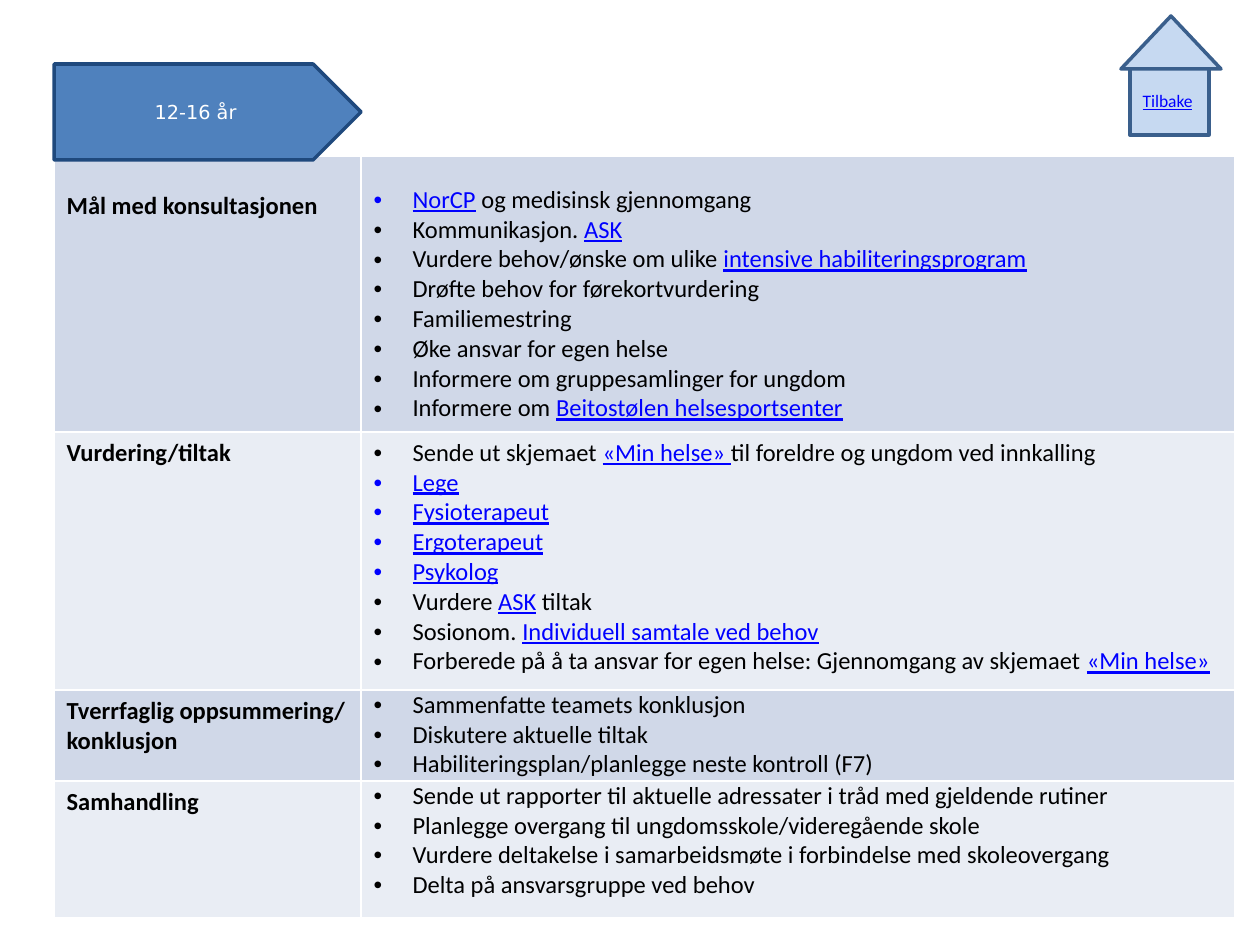
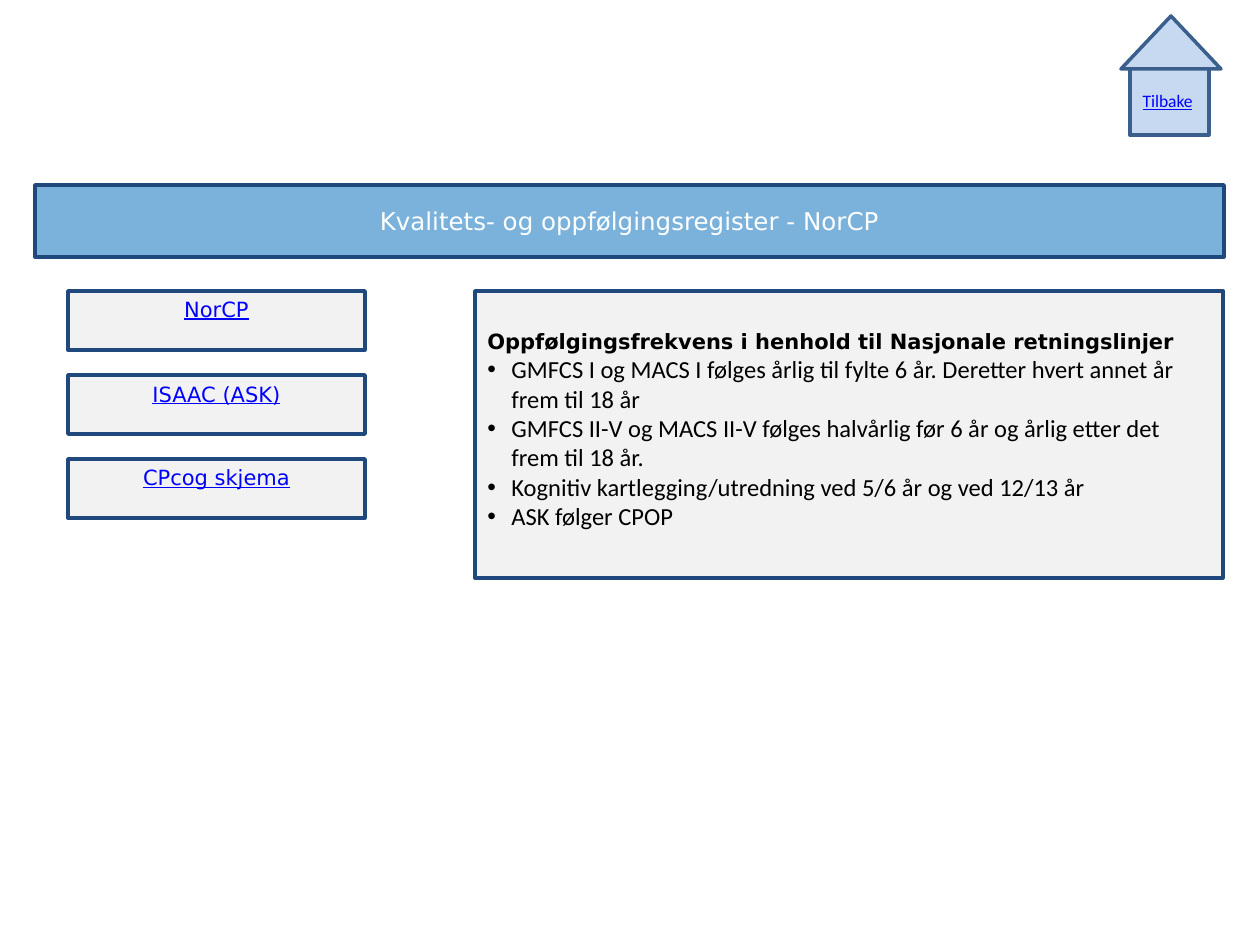
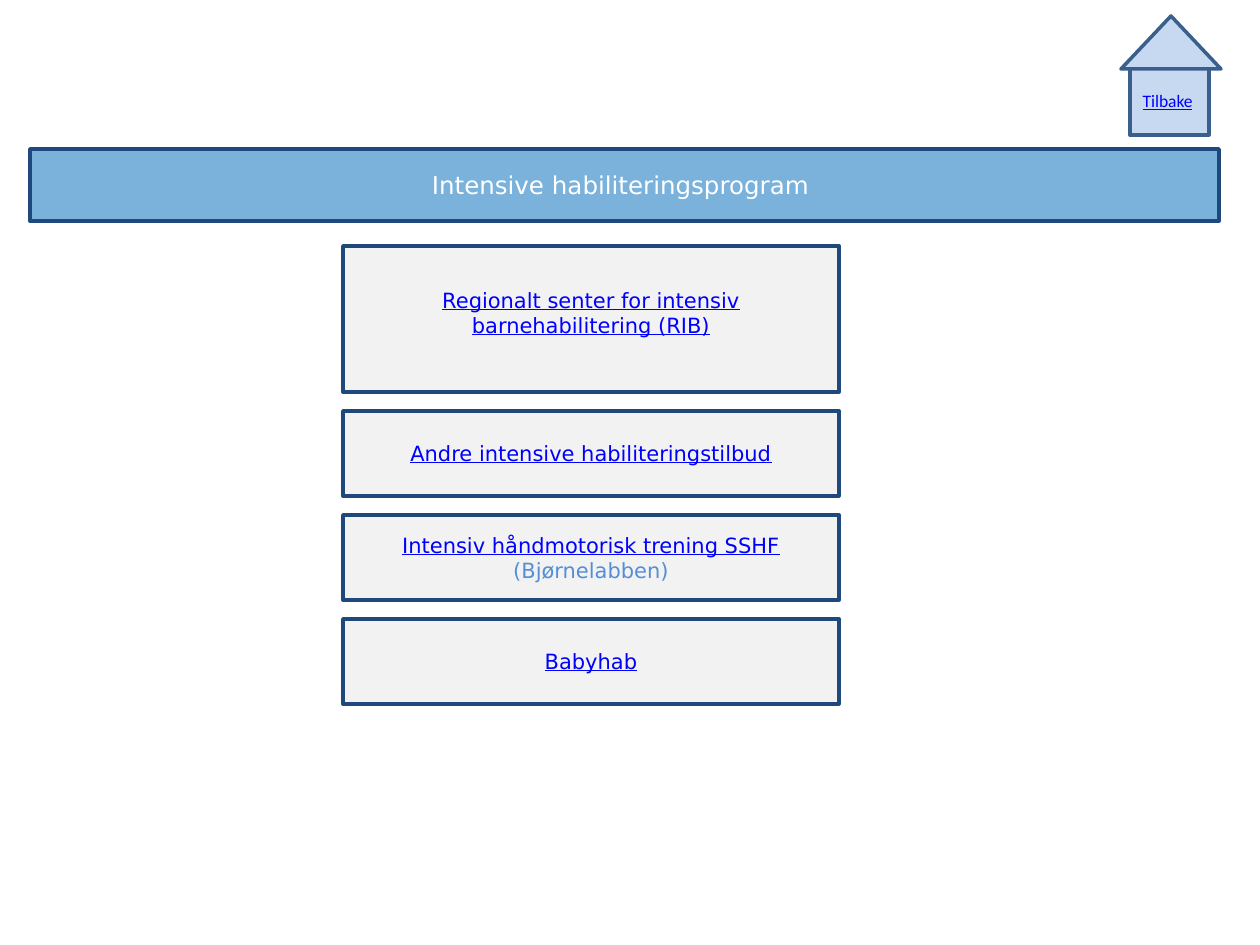
from dataclasses import dataclass

from lxml.etree import SubElement
from pptx import Presentation
from pptx.dml.color import RGBColor
from pptx.enum.shapes import MSO_SHAPE
from pptx.enum.text import MSO_ANCHOR, PP_ALIGN
from pptx.oxml.ns import qn
from pptx.util import Inches, Pt


@dataclass(frozen=True)
class Theme:
    white: str = "FFFFFF"
    black: str = "000000"
    link: str = "0000FF"
    accent: str = "558ED5"
    arrow: str = "4F81BD"
    outline: str = "1F497D"
    banner: str = "7AB2DC"
    panel: str = "F2F2F2"
    home: str = "C6D9F1"
    home_outline: str = "3A5F8C"
    bands: tuple = ("D0D8E8", "E9EDF4")
    body_font: str = "Calibri"
    label_font: str = "DejaVu Sans"
    title_size: int = 14
    body_size: int = 14
    button_size: int = 12
    arrow_size: int = 11
    home_size: int = 10
    outline_width: int = 2


THEME = Theme()
SLIDE_SIZE = (1260, 945)
BANNER_SIZE = (1189, 72)

AGE_GROUP = "12-16 år"
HOME_LABEL = "[Tilbake] "
CONSULTATION = [
    {
        "topic": ["Mål med konsultasjonen"],
        "points": [
            "[NorCP] og medisinsk gjennomgang",
            "Kommunikasjon. [ASK]",
            "Vurdere behov/ønske om ulike [intensive habiliteringsprogram]",
            "Drøfte behov for førekortvurdering",
            "Familiemestring",
            "Øke ansvar for egen helse",
            "Informere om gruppesamlinger for ungdom",
            "Informere om [Beitostølen helsesportsenter]",
        ],
        "height": 277, "topic_top": 36, "points_top": 30,
    },
    {
        "topic": ["Vurdering/tiltak"],
        "points": [
            "Sende ut skjemaet [«Min helse» ]til foreldre og ungdom ved innkalling",
            "[Lege]",
            "[Fysioterapeut]",
            "[Ergoterapeut]",
            "[Psykolog]",
            "Vurdere [ASK] tiltak",
            "Sosionom. [Individuell samtale ved behov]",
            "Forberede på å ta ansvar for egen helse: Gjennomgang av skjemaet [«Min helse»]",
        ],
        "height": 258, "topic_top": 6, "points_top": 6,
    },
    {
        "topic": ["Tverrfaglig oppsummering/", "konklusjon"],
        "points": [
            "Sammenfatte teamets konklusjon",
            "Diskutere aktuelle tiltak",
            "Habiliteringsplan/planlegge neste kontroll (F7)",
        ],
        "height": 91, "topic_top": 6, "points_top": 0,
    },
    {
        "topic": ["Samhandling"],
        "points": [
            "Sende ut rapporter til aktuelle adressater i tråd med gjeldende rutiner",
            "Planlegge overgang til ungdomsskole/videregående skole",
            "Vurdere deltakelse i samarbeidsmøte i forbindelse med skoleovergang",
            "Delta på ansvarsgruppe ved behov",
        ],
        "height": 137, "topic_top": 6, "points_top": 0,
    },
]

REGISTER_TITLE = "Kvalitets- og oppfølgingsregister - NorCP"
REGISTER_LINKS = ["[NorCP]", "[ISAAC (ASK)]", "[CPcog skjema]"]
FREQUENCY_HEADING = "Oppfølgingsfrekvens i henhold til Nasjonale retningslinjer"
FREQUENCY_POINTS = [
    "GMFCS I og MACS I følges årlig til fylte 6 år. Deretter hvert annet år frem til 18 år",
    "GMFCS II-V og MACS II-V følges halvårlig før 6 år og årlig etter det frem til 18 år.",
    "Kognitiv kartlegging/utredning ved 5/6 år og ved 12/13 år",
    "ASK følger CPOP",
]

PROGRAM_TITLE = "Intensive habiliteringsprogram "
MAIN_PROGRAM = "[Regionalt senter for intensiv barnehabilitering (RIB)]"
OTHER_PROGRAMS = [
    "[Andre intensive habiliteringstilbud]",
    "[Intensiv håndmotorisk trening SSHF ](Bjørnelabben)",
    "[Babyhab]",
]


def px(length):
    return round(length * Inches(1) / 126)


def rgb(color):
    return RGBColor.from_string(color)


def add_bullet(para, indent):
    properties = para._p.get_or_add_pPr()
    properties.set("marL", str(px(indent)))
    properties.set("indent", str(-px(indent)))
    SubElement(properties, qn("a:buFont")).set("typeface", "Arial")
    SubElement(properties, qn("a:buChar")).set("char", "•")


def write(para, text, size, color=THEME.black, font=THEME.label_font,
          bold=False, align=PP_ALIGN.LEFT, bullet=0):
    """Write text in which [square brackets] mark link styling."""
    para.alignment = align
    if bullet:
        add_bullet(para, bullet)
    for position, part in enumerate(text.replace("]", "[").split("[")):
        if not part:
            continue
        linked = position % 2 == 1
        span = para.add_run()
        span.text = part
        span.font.name = font
        span.font.size = Pt(size)
        span.font.bold = bold
        span.font.underline = linked
        span.font.color.rgb = rgb(THEME.link if linked else color)


def write_lines(frame, lines, **style):
    for position, line in enumerate(lines):
        para = frame.add_paragraph() if position else frame.paragraphs[0]
        write(para, line, **style)


def add_box(shapes, bounds, fill, outline=THEME.outline,
            kind=MSO_SHAPE.RECTANGLE, top=None):
    box = shapes.add_shape(kind, *map(px, bounds))
    box.shadow.inherit = False
    box.fill.solid()
    box.fill.fore_color.rgb = rgb(fill)
    box.line.color.rgb = rgb(outline)
    box.line.width = Pt(THEME.outline_width)
    frame = box.text_frame
    frame.word_wrap = True
    frame.vertical_anchor = MSO_ANCHOR.MIDDLE
    if top is not None:
        frame.vertical_anchor = MSO_ANCHOR.TOP
        frame.margin_top = px(top)
    return box


def add_label(shapes, bounds, text, fill, size, color=THEME.white,
              font=THEME.label_font, **look):
    box = add_box(shapes, bounds, fill, **look)
    write(box.text_frame.paragraphs[0], text, size, color, font,
          align=PP_ALIGN.CENTER)


def add_button(page, bounds, text, top=None):
    add_label(page.shapes, bounds, text, THEME.panel, THEME.button_size,
              THEME.accent, top=top)


def add_banner(page, left, top, text):
    add_label(page.shapes, (left, top, *BANNER_SIZE), text, THEME.banner,
              THEME.title_size)


def add_page(deck):
    return deck.slides.add_slide(deck.slide_layouts[6])


def add_home(page):
    house = page.shapes.add_group_shape().shapes
    add_label(house, (1130, 66, 79, 69), HOME_LABEL, THEME.home, THEME.home_size,
              font=THEME.body_font, outline=THEME.home_outline)
    add_box(house, (1121, 16, 100, 53), THEME.home, THEME.home_outline,
            MSO_SHAPE.ISOSCELES_TRIANGLE)


def style_cell(cell, fill, bottom_width=1):
    properties = cell._tc.get_or_add_tcPr()
    for side, width in (("L", 1), ("R", 1), ("T", 1), ("B", bottom_width)):
        border = SubElement(properties, qn("a:ln" + side), w=str(Pt(width)))
        paint = SubElement(border, qn("a:solidFill"))
        SubElement(paint, qn("a:srgbClr")).set("val", THEME.white)
    cell.fill.solid()
    cell.fill.fore_color.rgb = rgb(fill)


def add_consultation_table(page):
    widths = (307, 874)
    heights = [139] + [entry["height"] for entry in CONSULTATION]
    table = page.shapes.add_table(
        len(heights), len(widths),
        *map(px, (54, 16, sum(widths), sum(heights)))).table
    table.first_row = table.horz_banding = False
    for column, width in zip(table.columns, widths):
        column.width = px(width)
    for row, height in zip(table.rows, heights):
        row.height = px(height)
    for cell in table.rows[0].cells:
        style_cell(cell, THEME.white, bottom_width=3)
    for number, entry in enumerate(CONSULTATION):
        for column, (part, look) in enumerate(
                (("topic", {"bold": True}), ("points", {"bullet": 39}))):
            cell = table.cell(number + 1, column)
            style_cell(cell, THEME.bands[number % 2])
            cell.margin_top = px(entry[part + "_top"])
            cell.margin_bottom = 0
            if part == "points":
                cell.margin_right = 0
            write_lines(cell.text_frame, entry[part], size=THEME.body_size,
                        font=THEME.body_font, **look)


def build_consultation(deck):
    page = add_page(deck)
    add_consultation_table(page)
    add_label(page.shapes, (54, 64, 307, 96), AGE_GROUP, THEME.arrow,
              THEME.arrow_size, kind=MSO_SHAPE.PENTAGON)
    add_home(page)


def build_register(deck):
    page = add_page(deck)
    add_banner(page, 35, 185, REGISTER_TITLE)
    top, height, gap = 291, 59, 25
    for number, text in enumerate(REGISTER_LINKS):
        add_button(page, (68, top + number * (height + gap), 297, height), text, top=6)
    add_home(page)
    panel = add_box(page.shapes, (475, top, 748, 287), THEME.panel, top=38)
    frame = panel.text_frame
    write(frame.paragraphs[0], FREQUENCY_HEADING, THEME.button_size, bold=True)
    for point in FREQUENCY_POINTS:
        write(frame.add_paragraph(), point, THEME.body_size,
              font=THEME.body_font, bullet=24)


def build_programs(deck):
    page = add_page(deck)
    add_banner(page, 30, 149, PROGRAM_TITLE)
    add_home(page)
    left, top, width, gap = 343, 246, 496, 19
    main_height, height = 146, 85
    add_button(page, (left, top, width, main_height), MAIN_PROGRAM, top=41)
    top += main_height + gap
    for number, text in enumerate(OTHER_PROGRAMS):
        add_button(page, (left, top + number * (height + gap), width, height), text)


def main():
    deck = Presentation()
    deck.slide_width, deck.slide_height = map(px, SLIDE_SIZE)
    build_consultation(deck)
    build_register(deck)
    build_programs(deck)
    deck.save("out.pptx")


if __name__ == "__main__":
    main()
